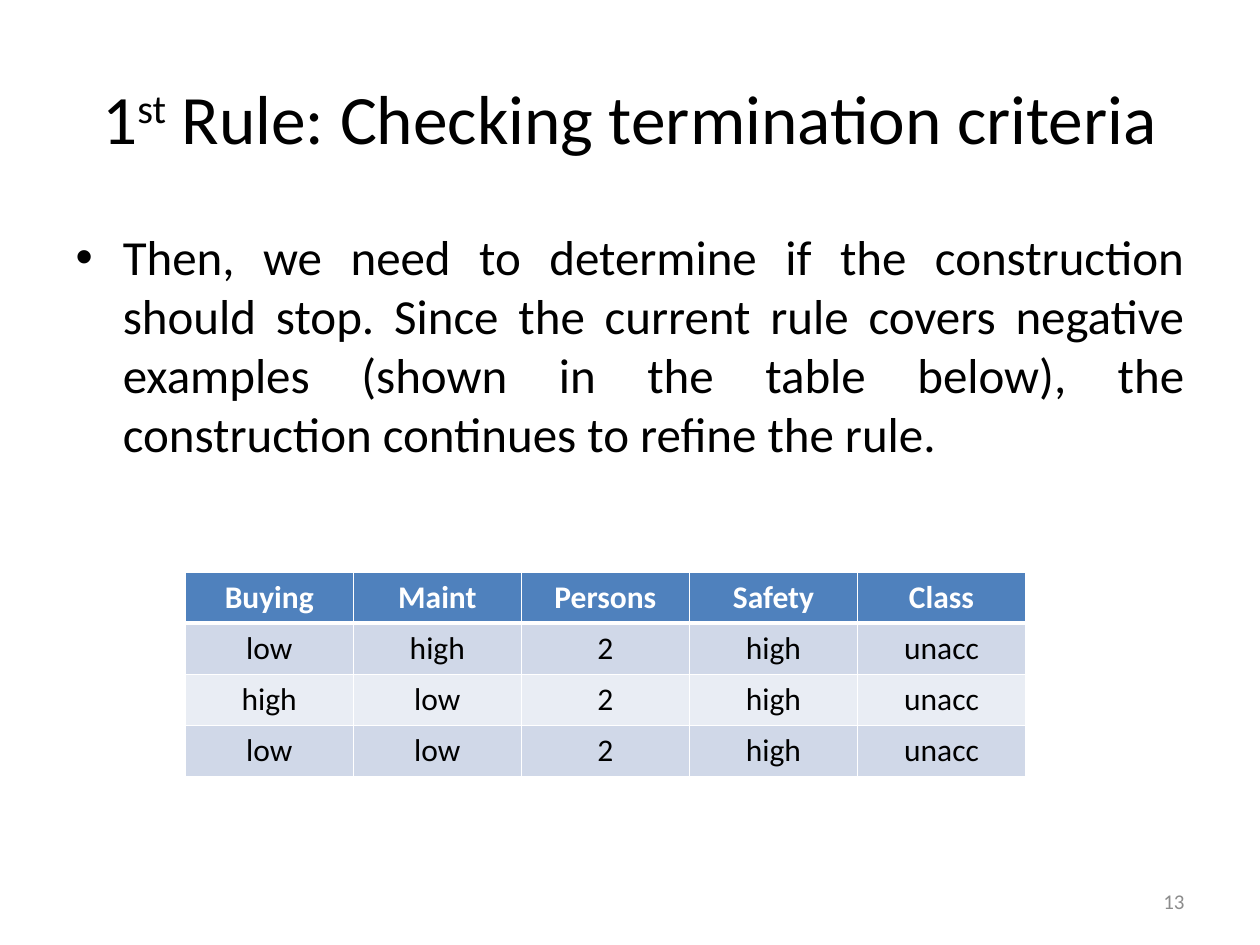
import dataclasses

import lxml.etree
import pptx
import pptx.dml.color
import pptx.enum.text
import pptx.oxml.ns
import pptx.util

Inches = pptx.util.Inches
Pt = pptx.util.Pt
Align = pptx.enum.text.PP_ALIGN
Anchor = pptx.enum.text.MSO_ANCHOR
qn = pptx.oxml.ns.qn


@dataclasses.dataclass(frozen=True)
class Theme:
    font: str = "Calibri"
    text: str = "000000"
    light: str = "FFFFFF"
    muted: str = "8C8C8C"
    header: str = "4F81BD"
    bands: tuple = ("D0D8E8", "E9EDF4")
    title_size: float = 39.6
    body_size: float = 28
    table_size: float = 18
    number_size: float = 12
    border: float = 1
    header_border: float = 3


THEME = Theme()

TITLE = [("1", 0), ("st", 30), (" Rule: Checking termination criteria", 0)]
BODY = (
    "Then, we need to determine if the construction should stop. "
    "Since the current rule covers negative examples (shown in the table below), "
    "the construction continues to refine the rule."
)
EXAMPLES = [
    ("Buying", "Maint", "Persons", "Safety", "Class"),
    ("low", "high", "2", "high", "unacc"),
    ("high", "low", "2", "high", "unacc"),
    ("low", "low", "2", "high", "unacc"),
]


def rgb(value):
    return pptx.dml.color.RGBColor.from_string(value)


def set_attrs(obj, values):
    for name, value in values.items():
        setattr(obj, name, value)


def place(sp, box):
    set_attrs(sp, dict(zip(("left", "top", "width", "height"), box)))


def add_run(p, text, size, color, bold=False):
    r = p.add_run()
    r.text = text
    set_attrs(r.font, {"name": THEME.font, "size": Pt(size), "bold": bold})
    r.font.color.rgb = rgb(color)
    return r


def format_frame(tf, anchor):
    set_attrs(tf, {
        "word_wrap": True,
        "auto_size": pptx.enum.text.MSO_AUTO_SIZE.NONE,
        "vertical_anchor": anchor,
    })


def add_title(s, box):
    sp = s.shapes.title
    place(sp, box)
    format_frame(sp.text_frame, Anchor.MIDDLE)
    p = sp.text_frame.paragraphs[0]
    p.alignment = Align.CENTER
    for text, raised in TITLE:
        r = add_run(p, text, THEME.title_size, THEME.text)
        if raised:
            r.font._element.set("baseline", str(raised * 1000))


def add_body(s, box):
    sp = s.placeholders[1]
    place(sp, box)
    format_frame(sp.text_frame, Anchor.TOP)
    p = sp.text_frame.paragraphs[0]
    p.alignment = Align.JUSTIFY
    add_run(p, BODY, THEME.body_size, THEME.text)


def set_borders(cell, widths):
    """Draw solid cell borders from a dict of side letter to width in points."""
    tc_pr = cell._tc.get_or_add_tcPr()
    for side, width in widths.items():
        ln = lxml.etree.SubElement(tc_pr, qn(f"a:ln{side}"), w=str(Pt(width)))
        fill = lxml.etree.SubElement(ln, qn("a:solidFill"))
        lxml.etree.SubElement(fill, qn("a:srgbClr"), val=THEME.light)


def add_examples(s, box):
    rows, cols = len(EXAMPLES), len(EXAMPLES[0])
    table = s.shapes.add_table(rows, cols, *box).table
    for i, values in enumerate(EXAMPLES):
        header = i == 0
        fill = THEME.header if header else THEME.bands[(i - 1) % 2]
        color = THEME.light if header else THEME.text
        widths = dict.fromkeys("LRTB", THEME.border)
        if header:
            widths["B"] = THEME.header_border
        elif i == 1:
            widths["T"] = THEME.header_border
        for j, text in enumerate(values):
            cell = table.cell(i, j)
            set_borders(cell, widths)
            cell.fill.solid()
            cell.fill.fore_color.rgb = rgb(fill)
            p = cell.text_frame.paragraphs[0]
            p.alignment = Align.CENTER
            add_run(p, text, THEME.table_size, color, header)


def add_number(s, box, number):
    tf = s.shapes.add_textbox(*box).text_frame
    format_frame(tf, Anchor.MIDDLE)
    p = tf.paragraphs[0]
    p.alignment = Align.RIGHT
    add_run(p, number, THEME.number_size, THEME.muted)


def inch_box(*lengths):
    return [Inches(length) for length in lengths]


def main():
    prs = pptx.Presentation()
    set_attrs(prs, {"slide_width": Inches(10), "slide_height": Inches(7.5)})
    s = prs.slides.add_slide(prs.slide_layouts[1])
    add_title(s, inch_box(0.5, 0.3, 9, 1.25))
    add_body(s, inch_box(0.5, 1.75, 9, 4.43))
    add_examples(s, inch_box(1.47, 4.54, 6.67, 1.62))
    add_number(s, inch_box(7.17, 6.95, 2.33, 0.4), "13")
    prs.save("out.pptx")


if __name__ == "__main__":
    main()
